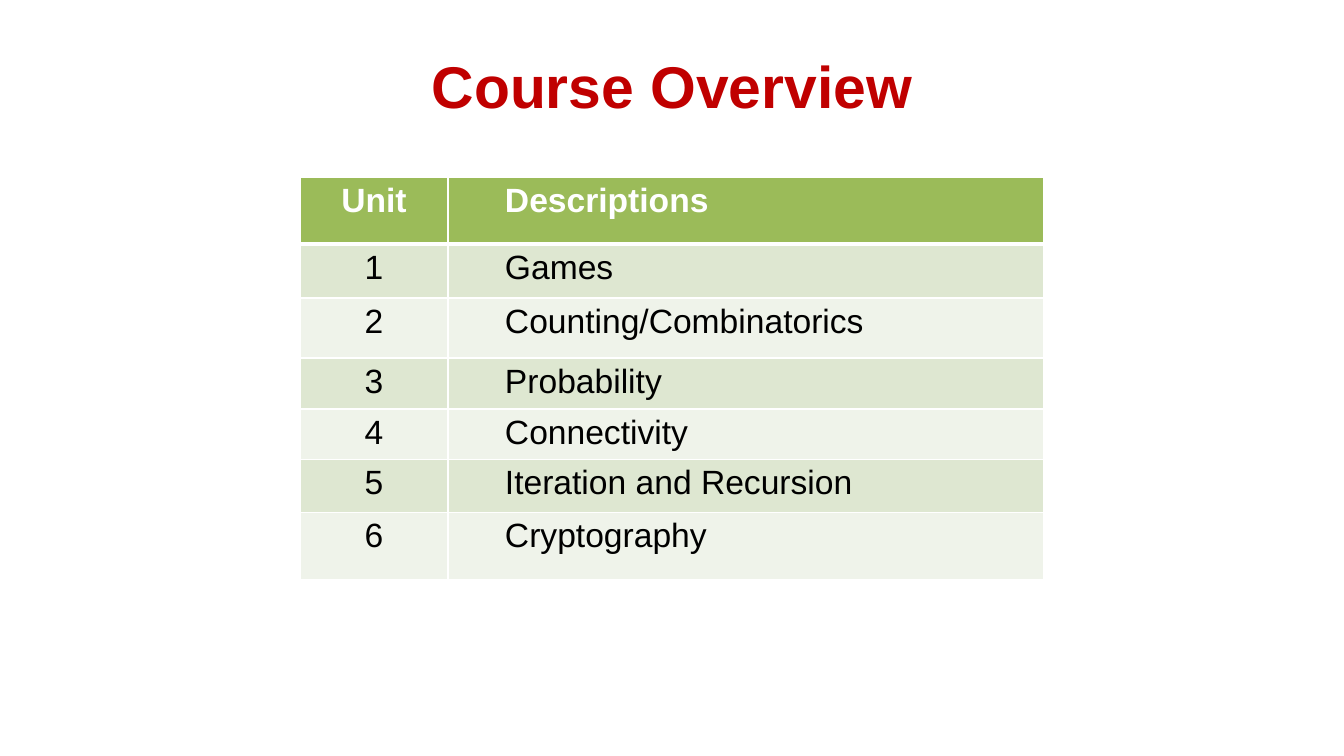
import pptx
import pptx.util
import pptx.dml.color
import pptx.enum.text
import pptx.oxml
import pptx.oxml.ns

COLORS = {
    "title": "C00000",
    "header": "9BBB59",
    "odd": "DEE7D1",
    "even": "EFF3EA",
    "white": "FFFFFF",
    "black": "000000",
}
ROWS = [
    ("Unit", "Descriptions"),
    ("1", "Games"),
    ("2", "Counting/Combinatorics"),
    ("3", "Probability"),
    ("4", "Connectivity"),
    ("5", "Iteration and Recursion"),
    ("6", "Cryptography"),
]
ROW_HEIGHTS = [67, 54, 60, 51, 46, 53, 67]
COLUMN_WIDTHS = [148, 596]
DESCRIPTION_INDENT = 57
ALIGN = pptx.enum.text.PP_ALIGN


def px(length):
    """Turn pixels (100.8 to the inch) into EMU."""
    return pptx.util.Emu(round(length * 914400 / 100.8))


def style(paragraph, size, color, bold, align):
    paragraph.alignment = align
    paragraph.font.name = "Arial"
    paragraph.font.size = pptx.util.Pt(size)
    paragraph.font.bold = bold
    paragraph.font.color.rgb = pptx.dml.color.RGBColor.from_string(COLORS[color])


prs = pptx.Presentation()
prs.slide_width, prs.slide_height = px(1344), px(756)
slide = prs.slides.add_slide(prs.slide_layouts[6])

title = slide.shapes.add_textbox(px(67), px(50), px(1210), px(72)).text_frame
title.word_wrap = True
title.margin_left = title.margin_right = title.margin_top = title.margin_bottom = 0
title.text = "Course Overview"
style(title.paragraphs[0], 42, "title", True, ALIGN.CENTER)

units = slide.shapes.add_table(
    len(ROWS), len(COLUMN_WIDTHS), px(300), px(177), px(sum(COLUMN_WIDTHS)), px(sum(ROW_HEIGHTS))
).table
for column, width in zip(units.columns, COLUMN_WIDTHS):
    column.width = px(width)

for r, (texts, height) in enumerate(zip(ROWS, ROW_HEIGHTS)):
    units.rows[r].height = px(height)
    is_header = r == 0
    fill = "header" if is_header else "odd" if r % 2 else "even"
    # The line under the header is shared by rows 0 and 1.
    border_points = {"L": 1, "R": 1, "T": 3 if r == 1 else 1, "B": 3 if is_header else 1}
    for c, text in enumerate(texts):
        cell = units.cell(r, c)
        cell.text = text
        style(
            cell.text_frame.paragraphs[0],
            24,
            "white" if is_header else "black",
            is_header,
            ALIGN.LEFT if c else ALIGN.CENTER,
        )
        if c:
            cell.margin_left = px(DESCRIPTION_INDENT)
        for side, points in border_points.items():
            cell._tc.get_or_add_tcPr().append(pptx.oxml.parse_xml(
                f'<a:ln{side} {pptx.oxml.ns.nsdecls("a")} w="{pptx.util.Pt(points)}">'
                f'<a:solidFill><a:srgbClr val="{COLORS["white"]}"/></a:solidFill></a:ln{side}>'
            ))
        cell.fill.solid()
        cell.fill.fore_color.rgb = pptx.dml.color.RGBColor.from_string(COLORS[fill])

prs.save("out.pptx")
